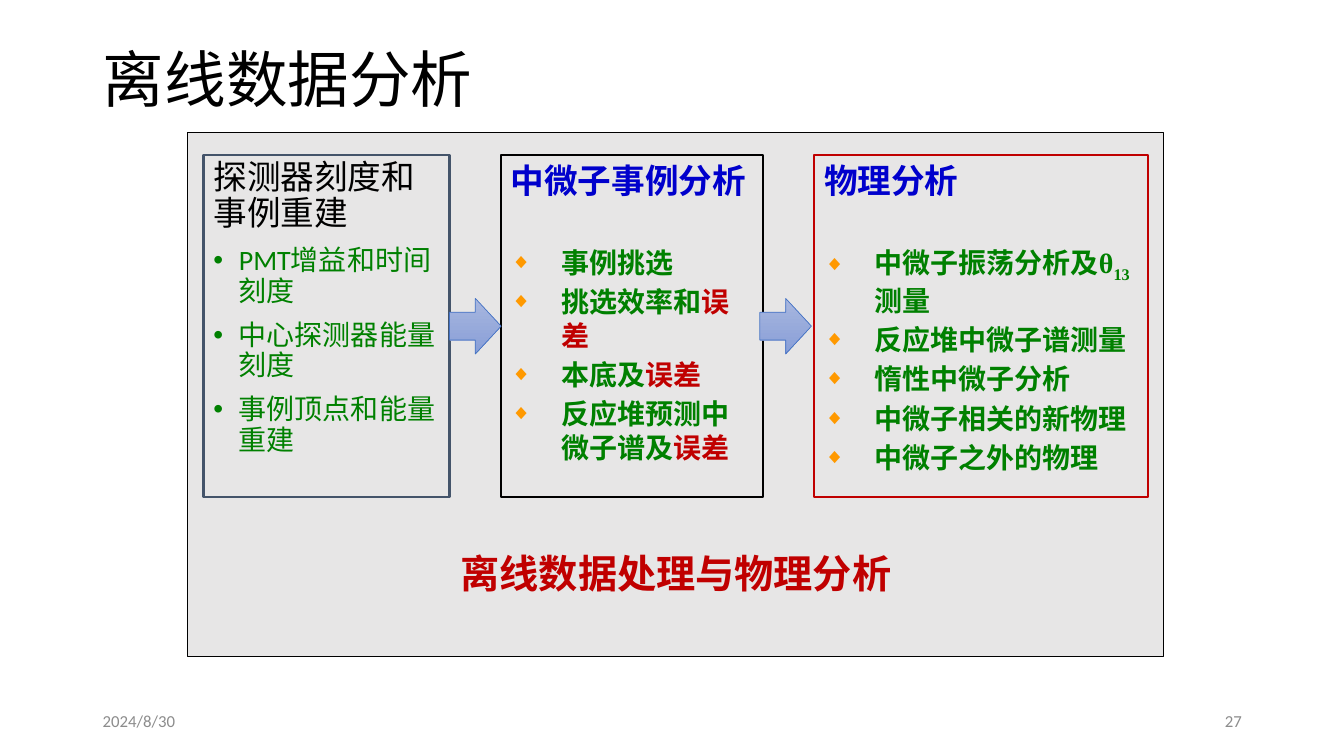
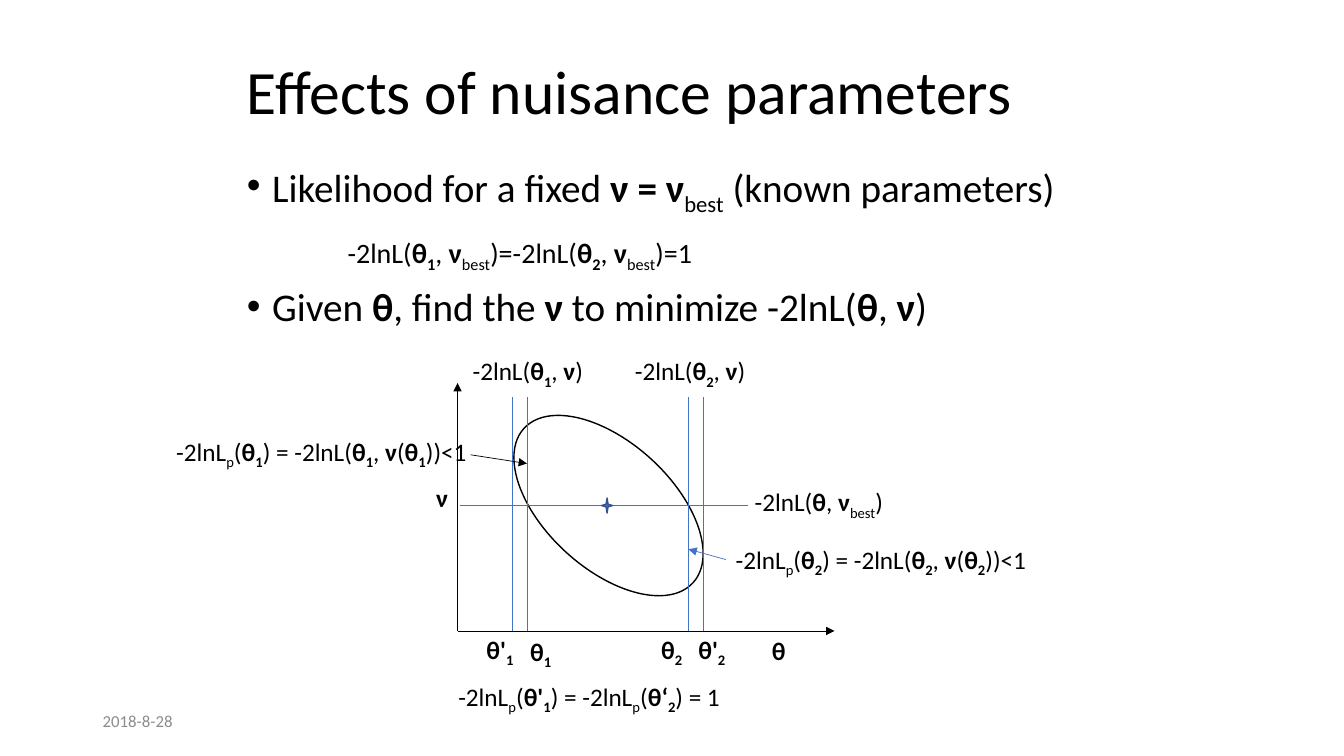
from dataclasses import dataclass

from lxml import etree
from pptx import Presentation
from pptx.dml.color import RGBColor
from pptx.enum import shapes, text
from pptx.oxml import ns
from pptx.util import Cm, Pt

BLACK, GREEN, RED, NAVY = "000000", "008000", "C00000", "0000CC"
BLUE, GREY, ORANGE, SLATE = "4472C4", "8C8C8C", "FF9900", "44546A"
BODY_FONT, BOX_FONT = "Calibri", "Times New Roman"


@dataclass(frozen=True)
class Box:
    left: float
    top: float
    width: float
    height: float

    def emu(self) -> tuple:
        return Cm(self.left), Cm(self.top), Cm(self.width), Cm(self.height)


@dataclass(frozen=True)
class Bullet:
    char: str
    color: str
    size: int = 100


@dataclass(frozen=True)
class Para:
    """Markup: *bold*, {subscript}, [red]."""
    words: str
    size: float
    color: str = BLACK
    font: str = BODY_FONT
    bold: bool = False
    align: str = "LEFT"
    before: float = 0
    spacing: float = 1.0
    indent: float = 0
    bullet: Bullet | None = None


@dataclass(frozen=True)
class Line:
    x1: float
    y1: float
    x2: float
    y2: float
    color: str = BLUE
    arrow: bool = False


def rgb(color: str) -> RGBColor:
    return RGBColor.from_string(color)


def sub(parent, tag: str, **attrs: str):
    return etree.SubElement(parent, ns.qn(tag), attrs)


def set_bullet(p, bullet: Bullet) -> None:
    pPr = p._p.get_or_add_pPr()
    sub(sub(pPr, "a:buClr"), "a:srgbClr", val=bullet.color)
    sub(pPr, "a:buSzPct", val=str(bullet.size * 1000))
    sub(pPr, "a:buFont", typeface="Arial")
    sub(pPr, "a:buChar", char=bullet.char)


def add_runs(p, para: Para) -> None:
    bold, lowered, red = para.bold, False, False
    piece = ""

    def flush() -> None:
        if not piece:
            return
        r = p.add_run()
        r.text = piece
        if bold != para.bold:
            r.font.bold = bold
        if red:
            r.font.color.rgb = rgb(RED)
        if lowered:
            r.font._element.set("baseline", "-25000")

    for ch in para.words:
        if ch not in "*{}[]":
            piece += ch
            continue
        flush()
        piece = ""
        if ch == "*":
            bold = not bold
        elif ch in "{}":
            lowered = ch == "{"
        else:
            red = ch == "["
    flush()


def fill_text(tf, paras: list[Para]) -> None:
    for i, para in enumerate(paras):
        p = tf.paragraphs[0] if i == 0 else tf.add_paragraph()
        pPr = p._p.get_or_add_pPr()
        if para.indent:
            pPr.set("marL", str(Cm(para.indent)))
        if para.bullet:
            pPr.set("indent", str(-Cm(para.indent)))
            set_bullet(p, para.bullet)
        p.alignment = getattr(text.PP_ALIGN, para.align)
        p.line_spacing = para.spacing
        p.space_before = Pt(para.before)
        p.font.name, p.font.size = para.font, Pt(para.size)
        p.font.bold = para.bold
        p.font.color.rgb = rgb(para.color)
        add_runs(p, para)


def add_text(slide, box: Box, paras: list[Para], wrap: bool = True,
             outline: str = "", middle: bool = False) -> None:
    sp = slide.shapes.add_textbox(*box.emu())
    tf = sp.text_frame
    tf.word_wrap = wrap
    if middle:
        tf.vertical_anchor = text.MSO_ANCHOR.MIDDLE
    if outline:
        sp.line.color.rgb, sp.line.width = rgb(outline), Pt(1.5)
    fill_text(tf, paras)


def add_preset(slide, kind: shapes.MSO_SHAPE, box: Box, line: str,
               weight: float, fill: str = ""):
    sp = slide.shapes.add_shape(kind, *box.emu())
    sp.shadow.inherit = False
    sp.line.color.rgb, sp.line.width = rgb(line), Pt(weight)
    if fill:
        sp.fill.solid()
        sp.fill.fore_color.rgb = rgb(fill)
    else:
        sp.fill.background()
    return sp


def add_line(slide, line: Line) -> None:
    cx = slide.shapes.add_connector(
        shapes.MSO_CONNECTOR.STRAIGHT,
        Cm(line.x1), Cm(line.y1), Cm(line.x2), Cm(line.y2))
    cx.line.color.rgb, cx.line.width = rgb(line.color), Pt(0.5)
    if line.arrow:
        sub(cx.line._get_or_add_ln(), "a:tailEnd", type="triangle")
    sub(cx._element.spPr, "a:effectLst")


def new_slide(prs, title: str, box: Box, date: str, number: str = ""):
    slide = prs.slides.add_slide(prs.slide_layouts[5])
    sp = slide.shapes.title
    sp.left, sp.top, sp.width, sp.height = box.emu()
    tf = sp.text_frame
    tf.word_wrap = True
    tf.auto_size = text.MSO_AUTO_SIZE.NONE
    tf.vertical_anchor = text.MSO_ANCHOR.MIDDLE
    fill_text(tf, [Para(title, 44, spacing=0.9)])
    for words, left, align in ((date, 2.34, "LEFT"), (number, 23.93, "RIGHT")):
        if words:
            add_text(slide, Box(left, 17.65, 7.62, 1.02),
                     [Para(words, 12, GREY, align=align)], middle=True)
    return slide


def analysis_column(heading: str, items: list[str]) -> list[Para]:
    diamond = Bullet("◆", ORANGE, 75)
    return [Para(heading, 24, NAVY, BOX_FONT, True)] + [
        Para(item, 20, GREEN, BOX_FONT, True, before=4 if i else 32,
             indent=1.27, bullet=diamond)
        for i, item in enumerate(items)]


def build_workflow(prs) -> None:
    slide = new_slide(prs, "离线数据分析", Box(2.34, 0.23, 21.89, 3.68),
                      "2024/8/30", "27")
    add_preset(slide, shapes.MSO_SHAPE.RECTANGLE,
               Box(4.72, 3.33, 24.61, 13.21), BLACK, 0.5, "E7E6E6")
    dot = Bullet("•", GREEN)
    calibration = [Para("探测器刻度和事例重建", 24, spacing=0.9)] + [
        Para(item, 20, GREEN, before=10, spacing=0.9, indent=0.64, bullet=dot)
        for item in ("PMT增益和时间刻度", "中心探测器能量刻度", "事例顶点和能量重建")]
    events = analysis_column("中微子事例分析", [
        "事例挑选", "挑选效率和[误差]", "本底及[误差]", "反应堆预测中微子谱及[误差]"])
    physics = analysis_column("物理分析", [
        "中微子振荡分析及θ{13}测量", "反应堆中微子谱测量", "惰性中微子分析",
        "中微子相关的新物理", "中微子之外的物理"])
    for left, width, outline, paras in ((5.13, 6.2, SLATE, calibration),
                                        (12.62, 6.6, BLACK, events),
                                        (20.52, 8.41, RED, physics)):
        add_text(slide, Box(left, 3.91, width, 8.61), paras, outline=outline)
    for left in (11.33, 19.15):
        sp = add_preset(slide, shapes.MSO_SHAPE.RIGHT_ARROW,
                        Box(left, 7.52, 1.3, 1.4), BLUE, 0.5)
        sp.fill.gradient()
        sp.fill.gradient_angle = 270
        for stop, color in zip(sp.fill.gradient_stops, ("A8B7DF", "889ED7")):
            stop.color.rgb = rgb(color)
    add_text(slide, Box(7.98, 13.72, 18.11, 1.45),
             [Para("离线数据处理与物理分析", 28, RED, bold=True, align="CENTER")])


def build_likelihood(prs) -> None:
    slide = new_slide(prs, "Effects of nuisance parameters",
                      Box(5.97, 1.02, 21.89, 2.72), "2018-8-28")
    dot = Bullet("•", BLACK)
    add_text(slide, Box(5.97, 4.01, 21.89, 13.13), [
        Para("Likelihood for a fixed *ν = ν*{best} (known parameters)", 28,
             spacing=0.9, indent=0.64, bullet=dot),
        Para("-2lnL(*θ{1}*,* ν*{best})=-2lnL(*θ{2}*,* ν*{best})=1", 20,
             before=17, spacing=0.9, indent=2.54),
        Para("Given *θ*, find the *ν *to minimize -2lnL(*θ*,* ν*)", 28,
             before=12, spacing=0.9, indent=0.64, bullet=dot)])

    x0, y0, top = 11.53, 15.9, 10.01
    theta1, theta2 = 13.28, 17.35
    sp = add_preset(slide, shapes.MSO_SHAPE.OVAL,
                    Box(12.45, 11.15, 5.77, 3.18), BLACK, 1)
    sp.rotation = 42.4
    axes = [Line(x0, y0, 21.03, y0, BLACK, True),
            Line(x0, y0, x0, 9.65, BLACK, True)]
    guides = [Line(x, top, x, y0) for x in (12.9, theta1, theta2, 17.73)]
    best = Line(11.58, 12.73, 18.85, 12.73)
    pointers = [Line(11.86, 11.46, theta1, 11.68, BLACK, True),
                Line(18.29, 14.1, theta2, 13.84, BLUE, True)]
    for line in [*axes, *guides, best, *pointers]:
        add_line(slide, line)
    add_preset(slide, shapes.MSO_SHAPE.STAR_4_POINT,
               Box(15.16, 12.55, 0.28, 0.38), "325491", 1, BLUE)

    labels = [(10.74, 12.04, 0.81, "*ν*"), (19.2, 15.88, 0.86, "*θ*"),
              (13.11, 15.9, 1.07, "*θ{1}*"), (16.41, 15.85, 1.07, "*θ{2}*"),
              (12.01, 15.85, 1.22, "*θ'{1}*"), (17.35, 15.85, 1.22, "*θ'{2}*"),
              (18.77, 12.14, 3.89, "-2lnL(*θ*,* ν*{best})"),
              (11.3, 17.04, 7.54,
               "-2lnL{p}(*θ'{1}*) = -2lnL{p}(*θ‘{2}*) = 1")]
    for n, left, profile_left, profile_top in ((1, 11.66, 4.19, 10.87),
                                               (2, 15.75, 18.29, 13.59)):
        theta = f"*θ{{{n}}}*"
        labels += [(left, 8.84, 3.35, f"-2lnL({theta},* ν*)"),
                   (profile_left, profile_top, 8.03,
                    f"-2lnL{{p}}({theta}) = -2lnL({theta},* ν*({theta}))<1")]
    for left, y, width, words in labels:
        add_text(slide, Box(left, y, width, 1.02), [Para(words, 18)], wrap=False)


def main() -> None:
    prs = Presentation()
    prs.slide_width, prs.slide_height = Cm(33.87), Cm(19.05)
    build_workflow(prs)
    build_likelihood(prs)
    prs.save("out.pptx")


if __name__ == "__main__":
    main()
